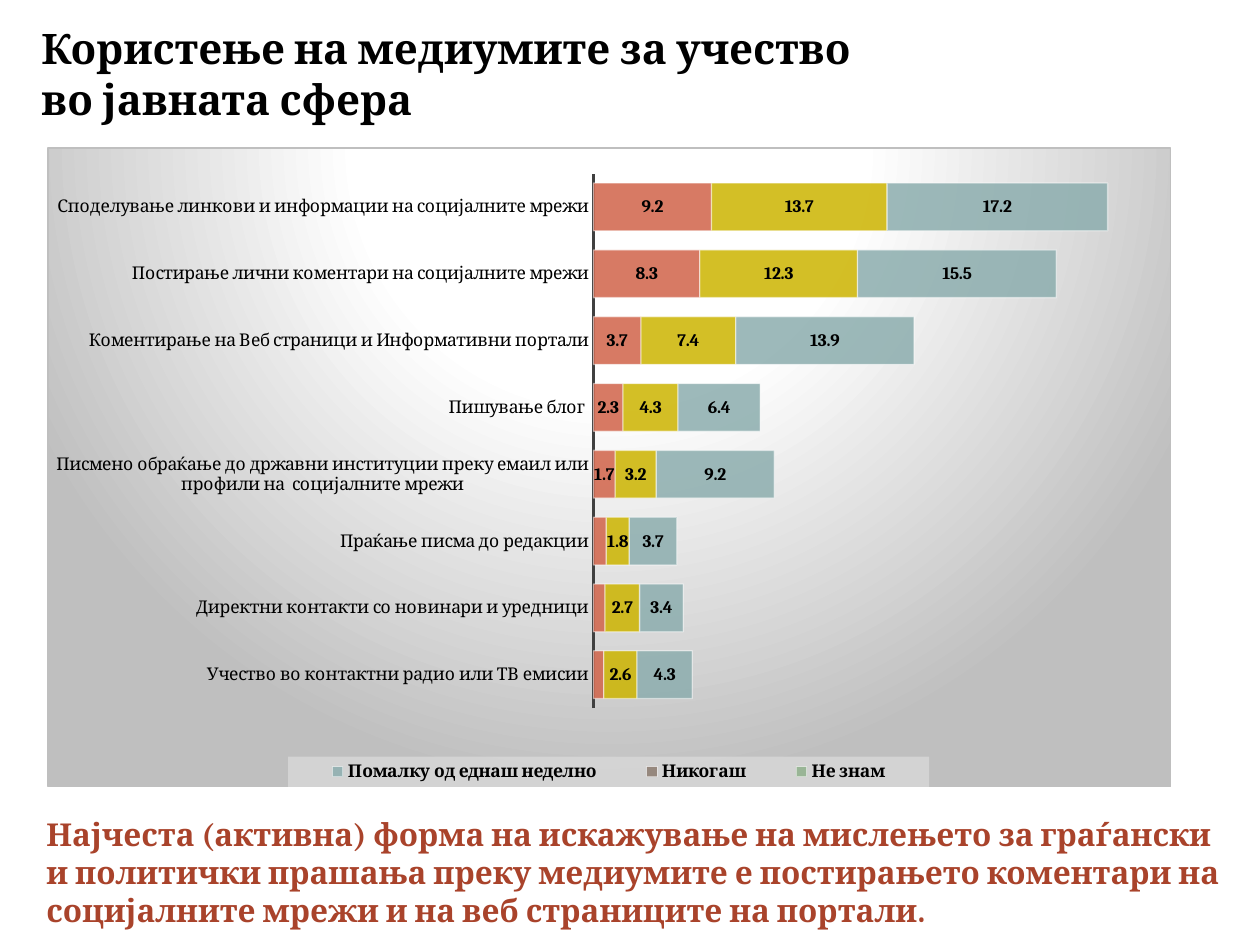
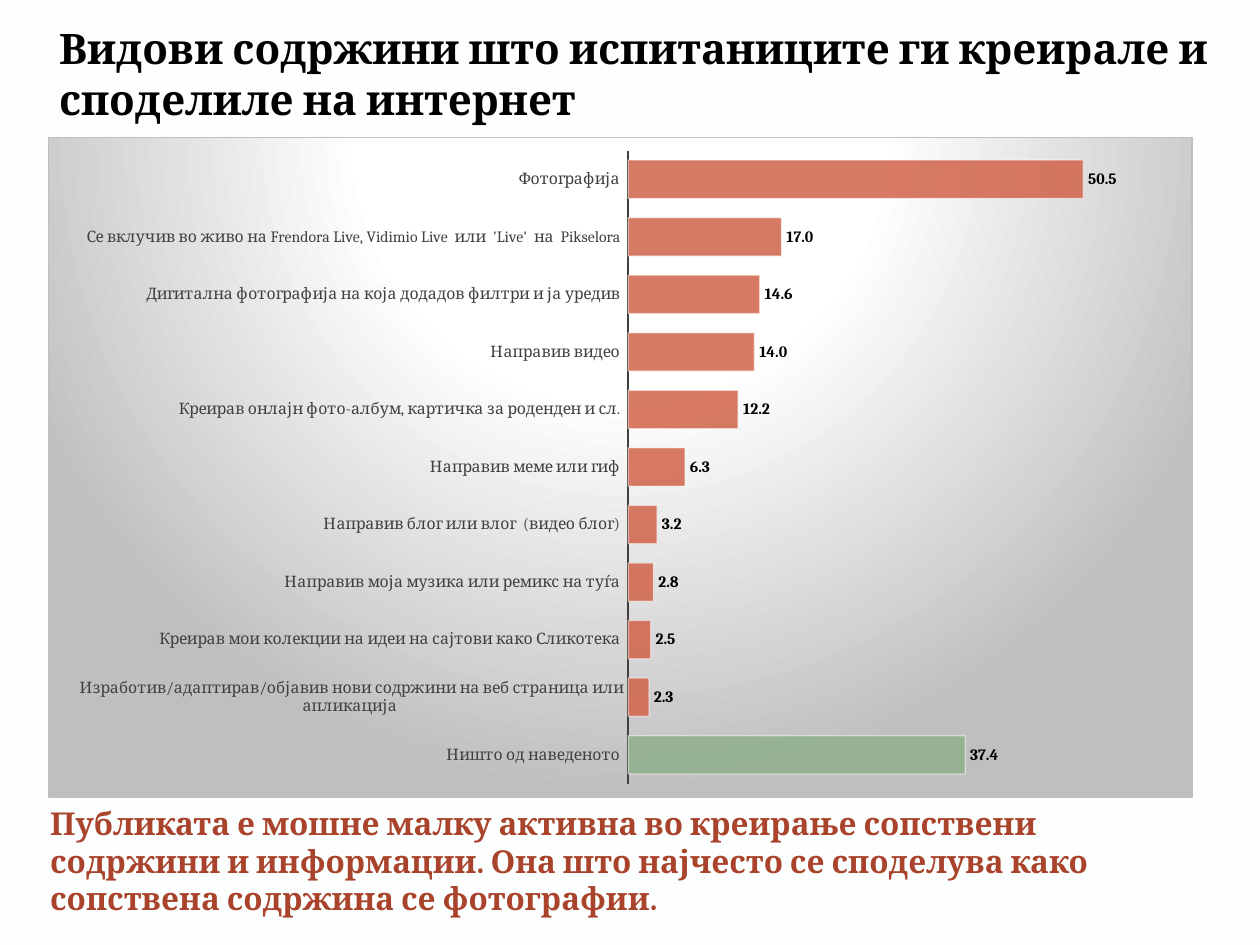
from collections import namedtuple

from pptx import Presentation
from pptx.chart.data import CategoryChartData
from pptx.dml.color import RGBColor
from pptx.enum.chart import XL_CHART_TYPE, XL_LABEL_POSITION, XL_LEGEND_POSITION, XL_TICK_MARK
from pptx.enum.text import MSO_ANCHOR
from pptx.oxml import parse_xml
from pptx.oxml.ns import nsdecls, qn
from pptx.util import Inches, Pt

CELL = Inches(0.1)
COLUMNS, ROWS = 100, 75
FONT = "Cambria"
BLACK, WHITE, GRAY = "000000", "FFFFFF", "404040"
PANEL_EDGE, LEGEND_FILL, MESSAGE = "BFBFBF", "D9D9D9", "A9432B"
RED, YELLOW, TEAL, BROWN, GREEN = "D16349", "CCB400", "8CADAE", "8C7B70", "8FB08C"

Box = namedtuple("Box", "left top width height")

MEDIA_USE = [
    ("Учество во контактни радио или ТВ емисии", 0.8, 2.6, 4.3),
    ("Директни контакти со новинари и уредници", 0.9, 2.7, 3.4),
    ("Праќање писма до редакции", 1, 1.8, 3.7),
    ("Писмено обраќање до државни институции преку емаил или профили на  социјалните мрежи", 1.7, 3.2, 9.2),
    ("Пишување блог ", 2.3, 4.3, 6.4),
    ("Коментирање на Веб страници и Информативни портали", 3.7, 7.4, 13.9),
    ("Постирање лични коментари на социјалните мрежи", 8.3, 12.3, 15.5),
    ("Споделување линкови и информации на социјалните мрежи", 9.2, 13.7, 17.2),
]
FREQUENCIES = [
    ("Секој ден", RED),
    ("Најмалку еднаш неделно", YELLOW),
    ("Помалку од еднаш неделно", TEAL),
    ("Никогаш", BROWN),
    ("Не знам", GREEN),
]
UNANSWERED = (3, 4)
SMALLEST_LABELED = 1.5

CONTENT_TYPES = [
    ("Ништо од наведеното ", 37.4),
    ("Изработив/адаптирав/објавив нови содржини на веб страница или апликација ", 2.3),
    ("Креирав мои колекции на идеи на сајтови како Сликотека ", 2.5),
    ("Направив моја музика или ремикс на туѓа ", 2.8),
    ("Направив блог или влог  (видео блог) ", 3.2),
    ("Направив меме или гиф ", 6.3),
    ("Креирав онлајн фото-албум, картичка за роденден и сл. ", 12.2),
    ("Направив видео ", 14),
    ("Дигитална фотографија на која додадов филтри и ја уредив ", 14.6),
    ("Се вклучив во живо на Frendora Live, Vidimio Live  или  'Live'  на  Pikselora ", 17),
    ("Фотографија ", 50.5),
]


def color(value):
    return RGBColor.from_string(value)


def place(box):
    return [round(length * CELL) for length in box]


def style_font(font, size, value, bold=False):
    font.name = FONT
    font.size = Pt(size)
    font.bold = bold
    font.color.rgb = color(value)


def add_text(slide, box, lines, size, value):
    shape = slide.shapes.add_textbox(*place(box))
    frame = shape.text_frame
    frame.word_wrap = True
    frame.vertical_anchor = MSO_ANCHOR.MIDDLE
    paragraph = frame.paragraphs[0]
    for index, line in enumerate(lines):
        if index:
            paragraph.add_line_break()
        run = paragraph.add_run()
        run.text = line
        style_font(run.font, size, value, True)


def set_alpha(parent, percent):
    for element in parent.iter(qn("a:srgbClr")):
        element.append(parse_xml(f'<a:alpha {nsdecls("a")} val="{percent * 1000}"/>'))


def paint_bar(bar, value):
    bar.format.fill.solid()
    bar.format.fill.fore_color.rgb = color(value)
    bar.format.line.width = Pt(0.75)
    bar.format.line.color.rgb = color(WHITE)
    properties = bar.format.fill._xPr
    set_alpha(properties.find(qn("a:solidFill")), 85)
    set_alpha(properties.find(qn("a:ln")), 50)


def layout_xml(shares, inner=False):
    target = '<c:layoutTarget val="inner"/>' if inner else ""
    sizes = "".join(f'<c:{name} val="{share}"/>' for name, share in zip("xywh", shares))
    return parse_xml(
        f'<c:layout {nsdecls("c")}><c:manualLayout>{target}'
        f'<c:xMode val="edge"/><c:yMode val="edge"/>{sizes}</c:manualLayout></c:layout>')


def deleted_xml(tag, index):
    return parse_xml(f'<c:{tag} {nsdecls("c")}><c:idx val="{index}"/><c:delete val="1"/></c:{tag}>')


def drop_layout(parent):
    for element in parent.findall(qn("c:layout")):
        parent.remove(element)


def paint_panel(chart):
    stops = "".join(
        f'<a:gs pos="{position * 1000}"><a:srgbClr val="{value}"/></a:gs>'
        for position, value in ((0, WHITE), (39, WHITE), (100, PANEL_EDGE)))
    chart._chartSpace.find(qn("c:chart")).addnext(parse_xml(
        f'<c:spPr {nsdecls("c", "a")}><a:gradFill><a:gsLst>{stops}</a:gsLst>'
        '<a:path path="circle"><a:fillToRect l="50000" t="-80000" r="50000" b="180000"/></a:path>'
        f'</a:gradFill><a:ln w="9525"><a:solidFill><a:srgbClr val="{PANEL_EDGE}"/></a:solidFill></a:ln></c:spPr>'))


def add_bars(slide, box, kind, rows, series_styles, label_position, plot_shares, gap, maximum, font_size, axis_color):
    data = CategoryChartData(number_format="0.0")
    data.categories = [row[0] for row in rows]
    for index, (name, _) in enumerate(series_styles, 1):
        data.add_series(name, [row[index] if index < len(row) else None for row in rows])
    chart = slide.shapes.add_chart(kind, *place(box), data).chart
    chart.has_title = False
    chart.has_legend = False
    style_font(chart.font, 10, BLACK)
    paint_panel(chart)

    category_axis = chart.category_axis
    category_axis.major_tick_mark = category_axis.minor_tick_mark = XL_TICK_MARK.NONE
    category_axis.format.line.color.rgb = color(GRAY)
    category_axis.format.line.width = Pt(1.5)
    style_font(category_axis.tick_labels.font, font_size, axis_color)
    value_axis = chart.value_axis
    value_axis.has_major_gridlines = False
    value_axis.minimum_scale, value_axis.maximum_scale = 0, maximum
    value_axis.visible = False

    plot = chart.plots[0]
    plot.gap_width = gap
    plot.vary_by_categories = False
    plot_area = chart._chartSpace.find(qn("c:chart")).find(qn("c:plotArea"))
    drop_layout(plot_area)
    plot_area.insert(0, layout_xml(plot_shares, True))
    for series, (_, fill) in zip(plot.series, series_styles):
        paint_bar(series, fill)
        labels = series.data_labels
        labels.show_value = True
        labels.position = label_position
        labels.number_format = "0.0"
        labels.number_format_is_linked = False
        style_font(labels.font, font_size, BLACK, True)
    return chart


def add_legend(chart, shares, hidden_entries):
    chart.has_legend = True
    legend = chart.legend
    legend.position = XL_LEGEND_POSITION.BOTTOM
    legend.include_in_layout = False
    style_font(legend.font, 10, BLACK, True)
    element = legend._element
    drop_layout(element)
    position = element.find(qn("c:legendPos"))
    position.addnext(layout_xml(shares))
    for index in reversed(hidden_entries):
        position.addnext(deleted_xml("legendEntry", index))
    element.find(qn("c:txPr")).addprevious(parse_xml(
        f'<c:spPr {nsdecls("c", "a")}><a:solidFill><a:srgbClr val="{LEGEND_FILL}">'
        '<a:alpha val="78000"/></a:srgbClr></a:solidFill></c:spPr>'))


def hide_small_labels(series):
    labels = series.data_labels._element
    small = [index for index, value in enumerate(series.values) if value < SMALLEST_LABELED]
    for position, index in enumerate(small):
        labels.insert(position, deleted_xml("dLbl", index))


def add_chart_slide(presentation, background, title_box, title, message_box, message):
    slide = presentation.slides.add_slide(presentation.slide_layouts[6])
    slide.background.fill.solid()
    slide.background.fill.fore_color.rgb = color(background)
    add_text(slide, title_box, title, 24, BLACK)
    add_text(slide, message_box, [message], 18, MESSAGE)
    return slide


def build_media_use(presentation):
    slide = add_chart_slide(
        presentation, WHITE,
        Box(2.3, 0.8, 95.4, 10),
        ["Користење на медиумите за учество", "во јавната сфера"],
        Box(2.7, 64.2, 96.7, 10),
        "Најчеста (активна) форма на искажување на мислењето за граѓански и политички прашања "
        "преку медиумите е постирањето коментари на социјалните мрежи и на веб страниците на портали.")
    chart = add_bars(
        slide, Box(3.75, 11.7, 89.2, 50.8), XL_CHART_TYPE.BAR_STACKED, MEDIA_USE, FREQUENCIES,
        XL_LABEL_POSITION.CENTER, (0.486, 0.04, 0.514, 0.837), 40, 45, 10, BLACK)
    chart.plots[0].overlap = 100
    hide_small_labels(chart.plots[0].series[0])
    add_legend(chart, (0.214, 0.953, 0.571, 0.047), UNANSWERED)


def build_content_types(presentation):
    slide = add_chart_slide(
        presentation, "FDFEFE",
        Box(3.7, 0.8, 93.8, 10),
        ["Видови содржини што испитаниците ги креирале и споделиле на интернет"],
        Box(3, 63.3, 92, 10),
        "Публиката е мошне малку активна во креирање сопствени содржини и информации. "
        "Она што најчесто се споделува како сопствена содржина се фотографии.")
    chart = add_bars(
        slide, Box(3.8, 10.85, 90.85, 52.5), XL_CHART_TYPE.BAR_CLUSTERED, CONTENT_TYPES, [("Series 1", RED)],
        XL_LABEL_POSITION.OUTSIDE_END, (0.507, 0.02, 0.473, 0.959), 50, 60, 9, GRAY)
    paint_bar(chart.plots[0].series[0].points[0], GREEN)


def main():
    presentation = Presentation()
    presentation.slide_width = COLUMNS * CELL
    presentation.slide_height = ROWS * CELL
    build_media_use(presentation)
    build_content_types(presentation)
    presentation.save("out.pptx")


if __name__ == "__main__":
    main()
